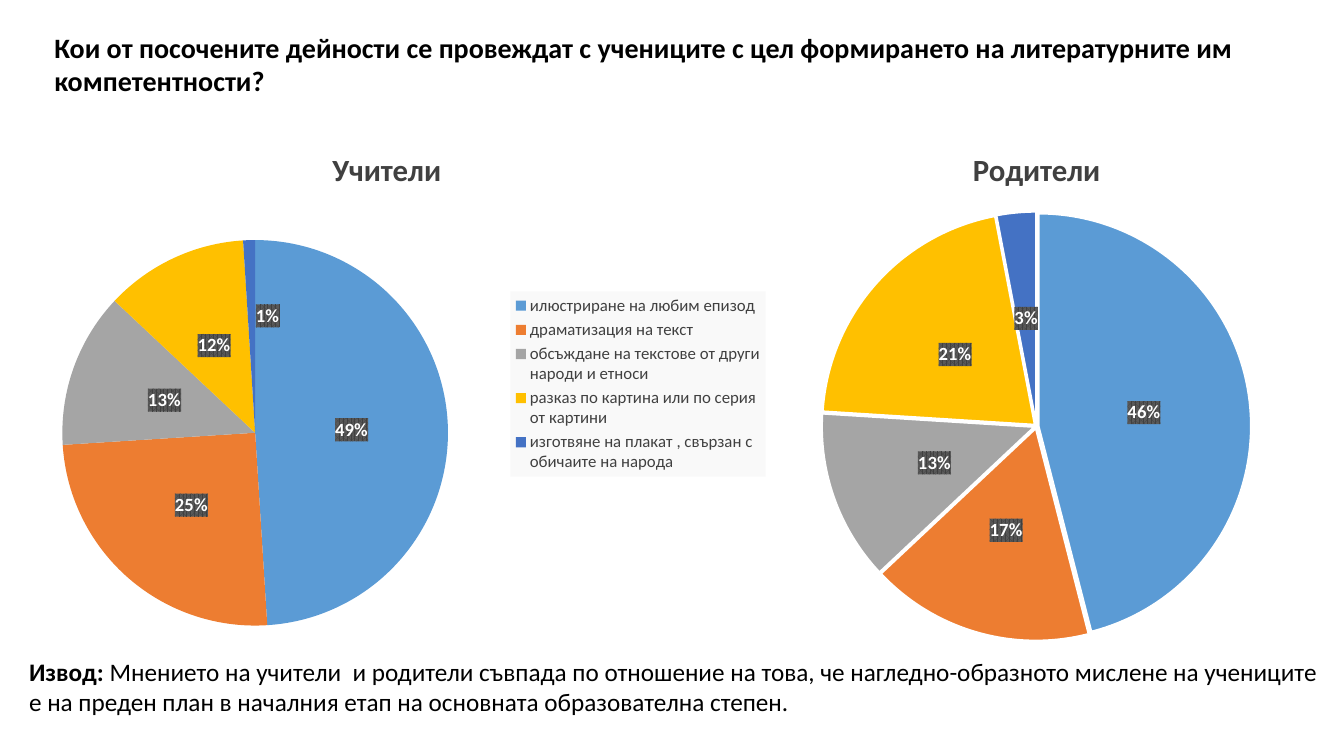
import copy
import pptx
import pptx.chart.data
import pptx.dml.color
import pptx.enum.chart
import pptx.oxml
import pptx.oxml.ns
import pptx.util

Inches = pptx.util.Inches
Pt = pptx.util.Pt
qn = pptx.oxml.ns.qn
FONT = "Calibri"
COLORS = {
    "text": "000000", "muted": "404040", "label": "FFFFFF", "label_stripe": "595959",
    "legend": "F9F9F9", "edge": "FFFFFF",
}
SLICES = ["5B9BD5", "ED7D31", "A5A5A5", "FFC000", "4472C4"]
NS = ('xmlns:c="http://schemas.openxmlformats.org/drawingml/2006/chart" '
      'xmlns:a="http://schemas.openxmlformats.org/drawingml/2006/main"')


def style_font(font, size, color, bold=False):
    font.name = FONT
    font.size = Pt(size)
    font.bold = bold
    font.color.rgb = pptx.dml.color.RGBColor.from_string(color)


def manual_layout(x, y, w=None, h=None):
    values = [("x", x), ("y", y)]
    modes = ""
    if w:
        values += [("w", w), ("h", h)]
        modes = '<c:layoutTarget val="inner"/><c:xMode val="edge"/><c:yMode val="edge"/>'
    body = "".join(f'<c:{key} val="{value}"/>' for key, value in values)
    return pptx.oxml.parse_xml(
        f"<c:layout {NS}><c:manualLayout>{modes}{body}</c:manualLayout></c:layout>")


deck = pptx.Presentation()
deck.slide_width = Inches(13.33)
deck.slide_height = Inches(7.5)
slide = deck.slides.add_slide(deck.slide_layouts[6])

activities = [
    "илюстриране на любим епизод",
    "драматизация на текст",
    "обсъждане на текстове от други народи и етноси",
    "разказ по картина или по серия от картини",
    "изготвяне на плакат , свързан с обичаите на народа",
]
surveys = [
    ("Родители", ["1", "2", "3", "4", "5"], [46, 17, 13, 21, 3],
     (7.55, 1.26, 5.46, 5.21), (0.11, 0.16, 0.78, 0.82)),
    ("Учители", activities, [49, 25, 13, 12, 1],
     (0, 1.26, 7.67, 5.1), (0.08, 0.22, 0.5, 0.75)),
]

for group, categories, shares, frame, pie_area in surveys:
    answers = pptx.chart.data.CategoryChartData()
    answers.categories = categories
    answers.add_series(group, shares)
    chart = slide.shapes.add_chart(
        pptx.enum.chart.XL_CHART_TYPE.PIE, *map(Inches, frame), answers).chart
    style_font(chart.font, 10, COLORS["text"])
    chart.has_title = True
    heading = chart.chart_title.text_frame.paragraphs[0].add_run()
    heading.text = group
    style_font(heading.font, 22, COLORS["muted"], True)
    chart.chart_title.include_in_layout = False

    pie = chart.plots[0]
    pie.vary_by_categories = True
    series = pie.series[0]
    is_parents = group == "Родители"
    for index, color in enumerate(SLICES):
        piece = series.points[index].format
        piece.fill.solid()
        piece.fill.fore_color.rgb = pptx.dml.color.RGBColor.from_string(color)
        if is_parents:
            piece.line.width = Pt(1.5)
            piece.line.color.rgb = pptx.dml.color.RGBColor.from_string(COLORS["edge"])
        else:
            piece.line.fill.background()

    percents = series.data_labels
    percents.show_percentage = True
    percents.show_value = False
    percents.number_format = "0%"
    percents.number_format_is_linked = False
    percents.position = pptx.enum.chart.XL_LABEL_POSITION.CENTER
    style_font(percents.font, 13.3, COLORS["label"], True)
    label_xml = series._element.find(qn("c:dLbls"))
    label_xml.find(qn("c:txPr")).addprevious(pptx.oxml.parse_xml(
        f'<c:spPr {NS}><a:pattFill prst="pct75">'
        f'<a:fgClr><a:srgbClr val="{COLORS["muted"]}"/></a:fgClr>'
        f'<a:bgClr><a:srgbClr val="{COLORS["label_stripe"]}"/></a:bgClr>'
        '</a:pattFill></c:spPr>'))

    plot_area = pie._element.getparent()
    for automatic in plot_area.findall(qn("c:layout")):
        plot_area.remove(automatic)
    plot_area.insert(0, manual_layout(*pie_area))

    chart.has_legend = not is_parents
    if is_parents:
        explosion = pptx.oxml.parse_xml(f'<c:explosion {NS} val="1"/>')
        series._element.find(qn("c:dPt")).addprevious(explosion)
    else:
        poster_label = pptx.oxml.parse_xml(f'<c:dLbl {NS}><c:idx val="4"/></c:dLbl>')
        poster_label.append(manual_layout(0.02, -0.04))
        for setting in label_xml:
            if setting.tag != qn("c:showLeaderLines"):
                poster_label.append(copy.deepcopy(setting))
        label_xml.insert(0, poster_label)

        legend = chart.legend
        legend.position = pptx.enum.chart.XL_LEGEND_POSITION.RIGHT
        legend.include_in_layout = False
        style_font(legend.font, 12, COLORS["muted"])
        legend_xml = legend._element
        for automatic in legend_xml.findall(qn("c:layout")):
            legend_xml.remove(automatic)
        legend_xml.find(qn("c:overlay")).addprevious(manual_layout(0.66, 0.32, 0.33, 0.36))
        legend_xml.find(qn("c:txPr")).addprevious(pptx.oxml.parse_xml(
            f'<c:spPr {NS}><a:solidFill><a:srgbClr val="{COLORS["legend"]}"/>'
            '</a:solidFill></c:spPr>'))

statements = [
    ((0.44, 0.25, 12.58, 0.77), 20, [
        ("Кои от посочените дейности се провеждат с учениците с цел формирането "
         "на литературните им компетентности?", True)]),
    ((0.19, 6.46, 13.07, 0.71), 18, [
        ("Извод: ", True),
        ("Мнението на учители  и родители съвпада по отношение на това, че "
         "нагледно-образното мислене на учениците е на преден план в началния етап "
         "на основната образователна степен.", False)]),
]
for frame, size, parts in statements:
    statement = slide.shapes.add_textbox(*map(Inches, frame)).text_frame
    statement.word_wrap = True
    for wording, bold in parts:
        run = statement.paragraphs[0].add_run()
        run.text = wording
        style_font(run.font, size, COLORS["text"], bold)

deck.save("out.pptx")
